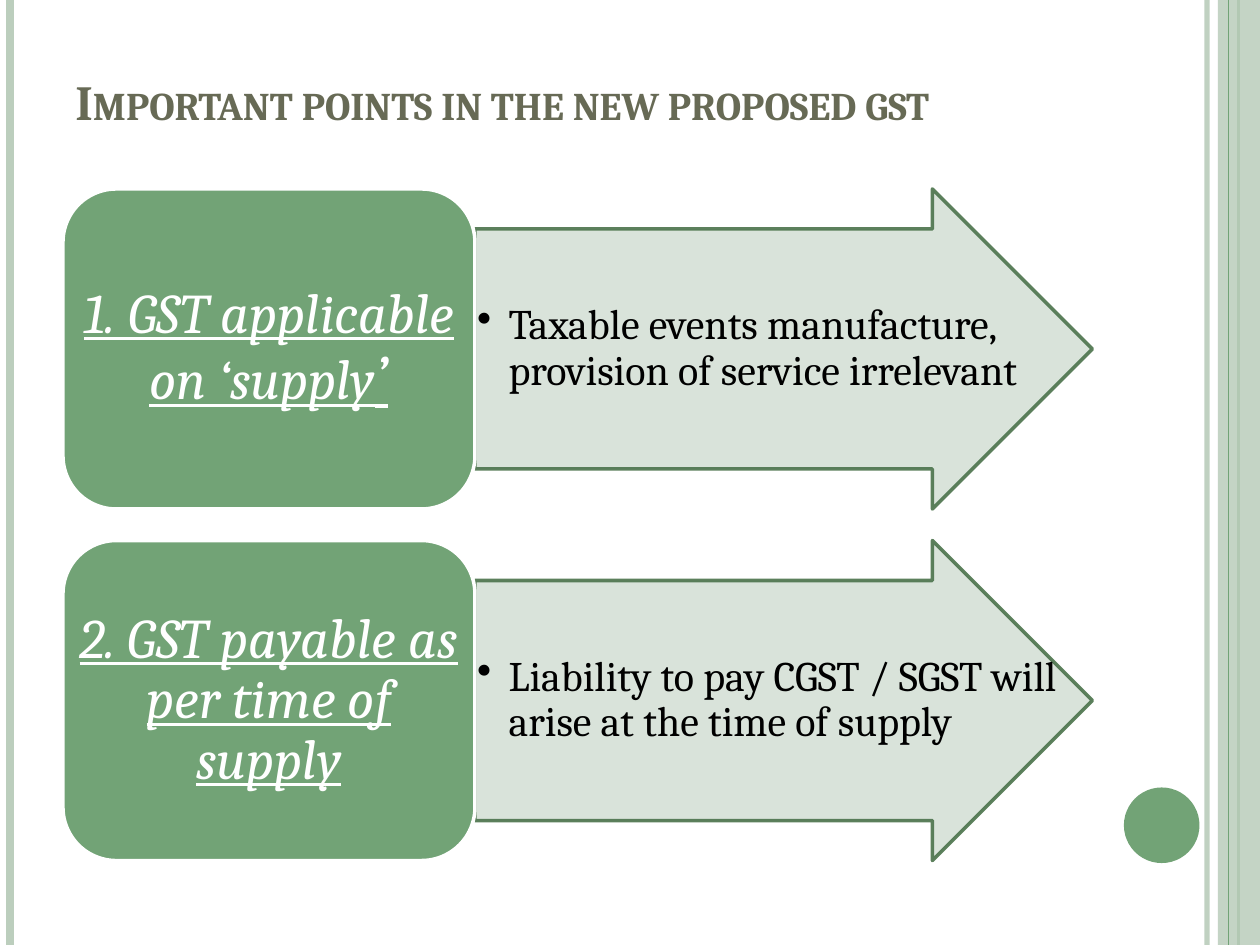
"""Build the slide on important points in the new proposed GST."""
from lxml.etree import SubElement
from pptx import Presentation
from pptx.dml.color import RGBColor
from pptx.enum.shapes import MSO_CONNECTOR, MSO_SHAPE as Shape
from pptx.enum.text import MSO_ANCHOR as Anchor, PP_ALIGN as Align
from pptx.oxml.ns import qn
from pptx.util import Pt

COLORS = {
    "green": "72A376", "pale": "BCCEBD", "arrow": "D5E0D6", "edge": "4B734B",
    "title": "676A55", "white": "FFFFFF", "black": "000000",
}


def paint(fill, color, alpha=100):
    fill.solid()
    fill.fore_color.rgb = RGBColor.from_string(COLORS[color])
    if alpha < 100:
        color_element = fill._xPr.find(".//" + qn("a:srgbClr"))
        SubElement(color_element, qn("a:alpha"), val=str(alpha * 1000))


def write(shape, runs, color, margins, anchor=Anchor.MIDDLE, align=Align.LEFT,
          spacing=1, bullet=False, **style):
    frame = shape.text_frame
    frame.word_wrap = True
    frame.vertical_anchor = anchor
    frame.margin_left = frame.margin_right = Pt(margins[0])
    frame.margin_top = frame.margin_bottom = Pt(margins[1])
    paragraph = frame.paragraphs[0]
    paragraph.alignment = align
    paragraph.line_spacing = spacing
    if bullet:
        properties = paragraph._p.get_or_add_pPr()
        properties.set("marL", str(Pt(18)))
        properties.set("indent", str(Pt(-18)))
        SubElement(properties, qn("a:buChar"), char="•")
    for text, size in runs:
        run = paragraph.add_run()
        run.text = text
        run.font.name = "Cambria"
        run.font.size = Pt(size)
        run.font.color.rgb = RGBColor.from_string(COLORS[color])
        for name, value in style.items():
            setattr(run.font, name, value)
    return run


presentation = Presentation()
presentation.slide_width = Pt(720)
presentation.slide_height = Pt(540)
slide = presentation.slides.add_slide(presentation.slide_layouts[6])
shapes = slide.shapes

for kind, x, color, width, alpha in [
    ("line", 689.76, "pale", 3, 93),
    ("line", 5.76, "pale", 4.5, 100),
    ("line", 707.76, "green", 1.5, 100),
    ("band", 696, "pale", 24, 87),
    ("line", 702, "green", 0.75, 100),
]:
    if kind == "band":
        band = shapes.add_shape(Shape.RECTANGLE, Pt(x), 0, Pt(width), Pt(540))
        band.shadow.inherit = False
        paint(band.fill, color, alpha)
        band.line.fill.background()
    else:
        line = shapes.add_connector(MSO_CONNECTOR.STRAIGHT, Pt(x), 0, Pt(x), Pt(540))
        line.line.width = Pt(width)
        paint(line.line.fill, color, alpha)
        SubElement(line._element.spPr, qn("a:effectLst"))

circle = shapes.add_shape(Shape.OVAL, Pt(642.24), Pt(450), Pt(43.2), Pt(43.2))
circle.shadow.inherit = False
paint(circle.fill, "green")
circle.line.fill.background()

title = shapes.add_textbox(Pt(36), Pt(38.16), Pt(588), Pt(39.6))
title_run = write(title, [("Important points in the new proposed gst", 28)], "title",
                  (7.2, 3.6), anchor=Anchor.BOTTOM, bold=True)
title_properties = title_run._r.get_or_add_rPr()
title_properties.set("cap", "small")
effects = SubElement(title_properties, qn("a:effectLst"))
title_properties.find(qn("a:solidFill")).addnext(effects)
shadow = SubElement(effects, qn("a:outerShdw"), blurRad=str(Pt(4)), dist=str(Pt(3)),
                    dir="2700000", algn="tl")
shadow_color = SubElement(shadow, qn("a:srgbClr"), val=COLORS["black"])
SubElement(shadow_color, qn("a:alpha"), val="43000")

left, top, height, step = 36, 108, 182.88, 200.88
label_width, arrow_width = 235.44, 352.8
points = [
    ([("1. GST applicable on ‘supply", 32), ("’", 36)],
     "Taxable events manufacture, provision of service irrelevant"),
    ([("2. GST payable as per time of supply", 32)],
     "Liability to pay CGST / SGST will arise at the time of supply"),
]
for index, (label_runs, detail) in enumerate(points):
    y = top + index * step
    arrow_box = Pt(left + label_width), Pt(y), Pt(arrow_width), Pt(height)
    arrow = shapes.add_shape(Shape.RIGHT_ARROW, *arrow_box)
    arrow.adjustments[0] = 0.75
    arrow.adjustments[1] = 0.5
    label = shapes.add_shape(Shape.ROUNDED_RECTANGLE, Pt(left), Pt(y),
                             Pt(label_width), Pt(height))
    for shape, fill, edge, alpha in [(arrow, "arrow", "edge", 90),
                                     (label, "green", "white", 100)]:
        shape.shadow.inherit = False
        paint(shape.fill, fill, alpha)
        shape.line.width = Pt(2)
        paint(shape.line.fill, edge, alpha)
    write(shapes.add_textbox(*arrow_box), [(detail, 24)], "black", (1.2, 1.2),
          spacing=0.9, bullet=True)
    write(label, label_runs, "white", (0, 0), align=Align.CENTER, spacing=0.9,
          italic=True, underline=True)

presentation.save("out.pptx")
